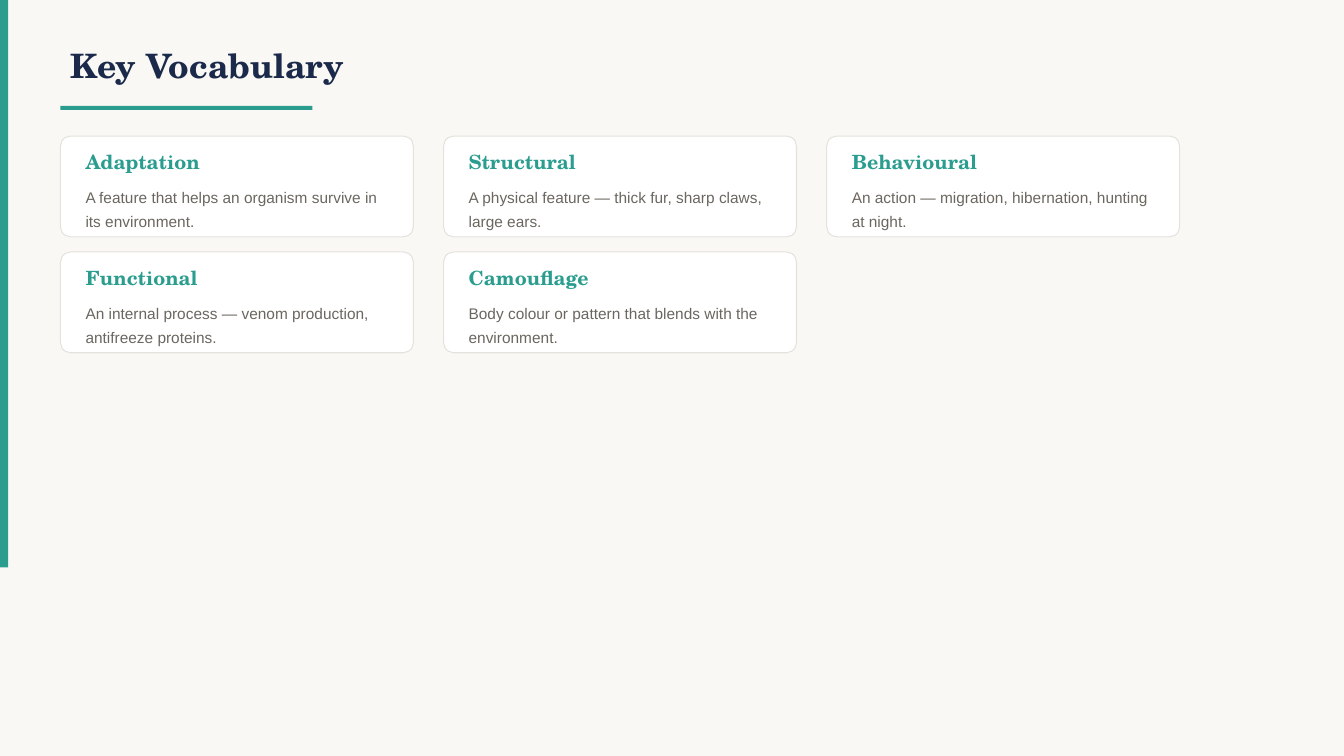
from pptx import Presentation
from pptx.dml.color import RGBColor
from pptx.enum.shapes import MSO_SHAPE as SHAPE
from pptx.enum.text import MSO_ANCHOR as ANCHOR, MSO_AUTO_SIZE as AUTO, PP_ALIGN as ALIGN
from pptx.util import Inches, Pt

COLORS = {"paper": "FAF8F5", "teal": "2A9D8F", "navy": "1B2A4A",
          "card": "FFFFFF", "border": "E5E2DC", "body": "6B6660"}
SERIF, SANS = "TeX Gyre Schola", "Arial"
COLS, LEFT, TOP = 3, 0.6, 1.35
CARD_W, CARD_H, COL_STEP, ROW_STEP = 3.5, 1, 3.8, 1.15
PAD = 0.15
TERMS = [
    ("Adaptation", "A feature that helps an organism survive in its environment."),
    ("Structural", "A physical feature — thick fur, sharp claws, large ears."),
    ("Behavioural", "An action — migration, hibernation, hunting at night."),
    ("Functional", "An internal process — venom production, antifreeze proteins."),
    ("Camouflage", "Body colour or pattern that blends with the environment."),
]


def rgb(name):
    return RGBColor.from_string(COLORS[name])


def add_block(s, kind, box, fill):
    sp = s.shapes.add_shape(kind, *map(Inches, box))
    sp.shadow.inherit = False
    sp.fill.solid()
    sp.fill.fore_color.rgb = rgb(fill)
    sp.line.fill.background()
    return sp


def write(sp, text, size, font, color, bold=False, spacing=None):
    tf = sp.text_frame
    tf.word_wrap = True
    tf.auto_size = AUTO.NONE
    tf.vertical_anchor = ANCHOR.MIDDLE
    p = tf.paragraphs[0]
    p.alignment = ALIGN.LEFT
    if spacing:
        p.line_spacing = spacing
    r = p.add_run()
    r.text = text
    r.font.size, r.font.name, r.font.bold = Pt(size), font, bold
    r.font.color.rgb = rgb(color)


def add_title(s, text):
    sp = s.shapes.title
    sp.left, sp.top, sp.width, sp.height = map(Inches, (LEFT, 0.3, 10, 0.7))
    write(sp, text, 24, SERIF, "navy", bold=True)


def add_label(s, box, *args, **style):
    write(s.shapes.add_textbox(*map(Inches, box)), *args, **style)


def add_card(s, col, row, term, meaning):
    x, y = LEFT + col * COL_STEP, TOP + row * ROW_STEP
    sp = add_block(s, SHAPE.ROUNDED_RECTANGLE, (x, y, CARD_W, CARD_H), "card")
    sp.adjustments[0] = 0.1
    sp.line.color.rgb = rgb("border")
    sp.line.width = Pt(0.75)
    text_w = CARD_W - 2 * PAD
    add_label(s, (x + PAD, y + 0.08, text_w, 0.35), term, 14, SERIF, "teal", bold=True)
    add_label(s, (x + PAD, y + 0.45, text_w, 0.5), meaning, 11, SANS, "body", spacing=1.3)


def main():
    """Build the vocabulary slide and save it."""
    prs = Presentation()
    prs.slide_width, prs.slide_height = Inches(13.33), Inches(7.5)
    s = prs.slides.add_slide(prs.slide_layouts.get_by_name("Title Only"))
    s.background.fill.solid()
    s.background.fill.fore_color.rgb = rgb("paper")
    add_block(s, SHAPE.RECTANGLE, (0, 0, 0.08, 5.63), "teal")
    add_title(s, "Key Vocabulary")
    add_block(s, SHAPE.RECTANGLE, (LEFT, 1.05, 2.5, 0.04), "teal")
    for i, (term, meaning) in enumerate(TERMS):
        row, col = divmod(i, COLS)
        add_card(s, col, row, term, meaning)
    prs.save("out.pptx")


if __name__ == "__main__":
    main()
